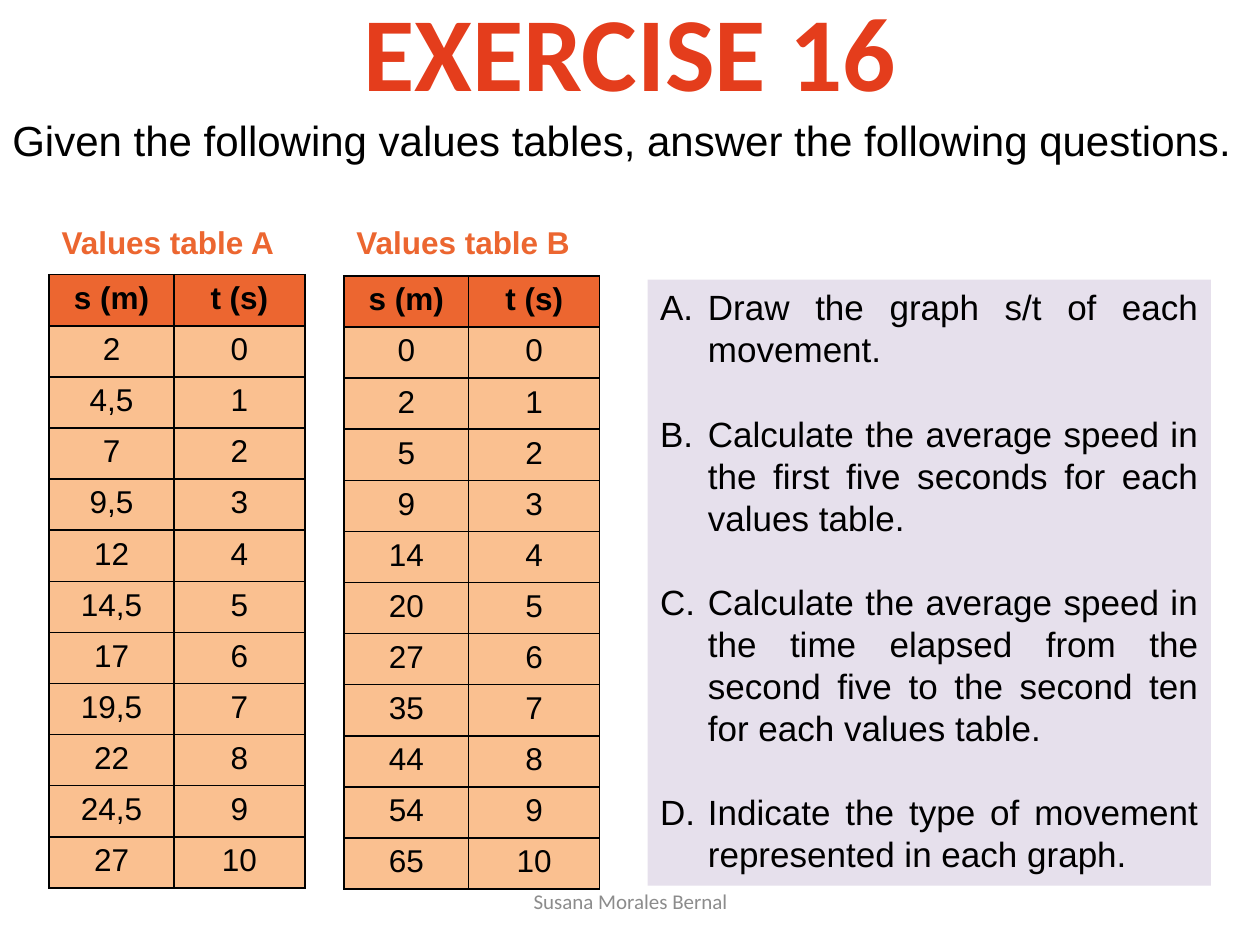
"""Exercise slide with two distance-time tables and four questions."""
from lxml import etree
from pptx import Presentation
from pptx import util as u
from pptx.dml.color import RGBColor
from pptx.enum import shapes, text
from pptx.oxml.ns import qn

THEME = {
    "title": "E43D1C", "accent": "EC6630", "row": "FAC090", "panel": "E6E0EC",
    "ink": "000000", "muted": "8C8C8C", "body_font": "Arial", "title_font": "Calibri",
    "title_size": 60, "intro_size": 24, "question_size": 20, "table_size": 18, "footer_size": 12,
}
ALIGN = text.PP_ALIGN

deck = Presentation()
deck.slide_width, deck.slide_height = u.Inches(10), u.Inches(7.5)
slide = deck.slides.add_slide(deck.slide_layouts[5])


def share(left, top, width, height):
    """Turn percentages of the slide into a position and size."""
    across, down = deck.slide_width / 100, deck.slide_height / 100
    return [round(n) for n in (left * across, top * down, width * across, height * down)]


def write(paragraph, words, size, color="ink", font="body_font", bold=False, align=ALIGN.LEFT):
    """Add one formatted run to a paragraph."""
    paragraph.alignment = align
    run = paragraph.add_run()
    run.text = words
    run.font.name, run.font.size, run.font.bold = THEME[font], u.Pt(THEME[size]), bold
    run.font.color.rgb = RGBColor.from_string(THEME[color])


heading = slide.shapes.title
heading.left, heading.top, heading.width, heading.height = share(5, -3.07, 90, 16.67)
heading.text_frame.vertical_anchor = text.MSO_ANCHOR.MIDDLE
write(heading.text_frame.paragraphs[0], "EXERCISE 16", "title_size", "title", "title_font", True, ALIGN.CENTER)

intro = slide.shapes.add_textbox(*share(0, 11.47, 100, 6.8)).text_frame
intro.word_wrap = True
write(intro.paragraphs[0], "Given the following values tables, answer the following questions.", "intro_size")

value_tables = [
    ("Values table A", 3.9, 29.07, "2 4,5 7 9,5 12 14,5 17 19,5 22 24,5 27".split()),
    ("Values table B", 27.3, 29.2, "0 2 5 9 14 20 27 35 44 54 65".split()),
]
for caption, left, top, distances in value_tables:
    label = slide.shapes.add_textbox(*share(left, 22.93, 20.3, 5.33)).text_frame
    label.word_wrap = True
    write(label.paragraphs[0], caption, "table_size", "accent", bold=True)

    records = [("s (m)", "t (s)")] + [(s, str(t)) for t, s in enumerate(distances)]
    grid = slide.shapes.add_table(len(records), 2, *share(left, top, 20.3, 64.93)).table
    grid.horz_banding = False
    grid.columns[0].width, grid.columns[1].width = u.Inches(0.99), u.Inches(1.04)
    for r, record in enumerate(records):
        for c, value in enumerate(record):
            cell = grid.cell(r, c)
            write(cell.text_frame.paragraphs[0], value, "table_size", bold=r == 0, align=ALIGN.CENTER)
            props = cell._tc.get_or_add_tcPr()
            for side in ("lnL", "lnR", "lnT", "lnB"):
                border = etree.SubElement(props, qn(f"a:{side}"), w=str(u.Pt(1)))
                ink = etree.SubElement(border, qn("a:solidFill"))
                etree.SubElement(ink, qn("a:srgbClr"), val=THEME["ink"])
            cell.fill.solid()
            cell.fill.fore_color.rgb = RGBColor.from_string(THEME["row" if r else "accent"])

questions = [
    "Draw the graph s/t of each movement.",
    "Calculate the average speed in the first five seconds for each values table.",
    "Calculate the average speed in the time elapsed from the second five to the second ten for each values table.",
    "Indicate the type of movement represented in each graph.",
]
panel = slide.shapes.add_shape(shapes.MSO_SHAPE.RECTANGLE, *share(51.4, 29.6, 44.7, 64.13))
panel.shadow.inherit = False
panel.fill.solid()
panel.fill.fore_color.rgb = RGBColor.from_string(THEME["panel"])
panel.line.fill.background()
panel.text_frame.word_wrap = True
panel.text_frame.vertical_anchor = text.MSO_ANCHOR.TOP
for i, question in enumerate(questions):
    item = panel.text_frame.add_paragraph() if i else panel.text_frame.paragraphs[0]
    write(item, question, "question_size", align=ALIGN.JUSTIFY)
    item.space_before = u.Pt(24 if i else 0)
    props = item._p.get_or_add_pPr()
    props.set("marL", str(u.Inches(0.38)))
    props.set("indent", str(-u.Inches(0.38)))
    etree.SubElement(props, qn("a:buFont"), typeface=THEME["body_font"])
    etree.SubElement(props, qn("a:buAutoNum"), type="alphaUcPeriod")

footer = slide.shapes.add_textbox(*share(34.2, 92.67, 31.7, 5.33)).text_frame
footer.word_wrap = True
footer.vertical_anchor = text.MSO_ANCHOR.MIDDLE
write(footer.paragraphs[0], "Susana Morales Bernal", "footer_size", "muted", "title_font", align=ALIGN.CENTER)

deck.save("out.pptx")
